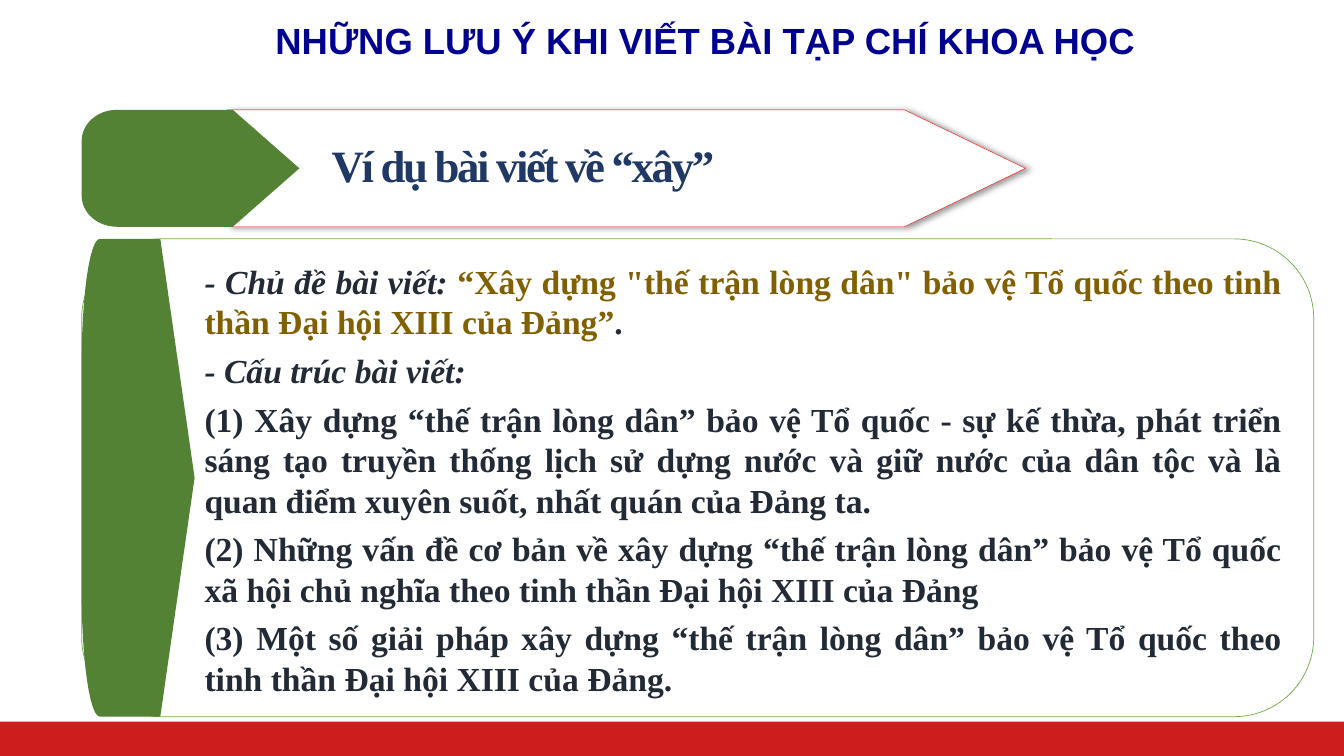
"""Build the slide with notes on writing a journal article."""
import math

from lxml import etree
from pptx import Presentation
from pptx import util as u
from pptx.dml.color import RGBColor
from pptx.enum import shapes, text
from pptx.oxml.ns import qn

COLOURS = {
    "white": "FFFFFF", "red": "CD1D1D", "outline red": "FF0000",
    "green": "548235", "light green": "70AD47", "ink": "222A35",
    "gold": "806000", "navy": "203864", "title blue": "000090",
    "black": "000000",
}
SERIF = "Times New Roman"
TITLE = "NHỮNG LƯU Ý KHI VIẾT BÀI TẠP CHÍ KHOA HỌC"
HEADING = "Ví dụ bài viết về “xây”"
BODY = [
    [("- Chủ đề bài viết: ", {"italic": True}),
     ("“Xây dựng \"thế trận lòng dân\" bảo vệ Tổ quốc theo tinh thần "
      "Đại hội XIII của Đảng”", {"colour": "gold"}),
     (".", {})],
    [("- Cấu trúc bài viết:", {"italic": True})],
    [("(1) Xây dựng “thế trận lòng dân” bảo vệ Tổ quốc - sự kế thừa, phát "
      "triển sáng tạo truyền thống lịch sử dựng nước và giữ nước của dân tộc "
      "và là quan điểm xuyên suốt, nhất quán của Đảng ta.", {})],
    [("(2) Những vấn đề cơ bản về xây dựng “thế trận lòng dân” bảo vệ Tổ quốc "
      "xã hội chủ nghĩa theo tinh thần Đại hội XIII của Đảng", {})],
    [("(3) Một số giải pháp xây dựng “thế trận lòng dân” bảo vệ Tổ quốc theo "
      "tinh thần Đại hội XIII của Đảng.", {})],
]


def rgb(name):
    """Return the named colour."""
    return RGBColor.from_string(COLOURS[name])


def paint(shape, fill, line=None, width=0.5):
    """Set the fill and outline of a shape and remove its shadow."""
    shape.shadow.inherit = False
    shape.fill.solid()
    shape.fill.fore_color.rgb = rgb(fill)
    if line:
        shape.line.color.rgb = rgb(line)
        shape.line.width = u.Pt(width)
    else:
        shape.line.fill.background()


def add_polygon(slide, points):
    """Add a closed outline through points given in inches."""
    corners = [(u.Inches(x), u.Inches(y)) for x, y in points]
    builder = slide.shapes.build_freeform(*corners[0])
    builder.add_line_segments(corners[1:], close=True)
    return builder.convert_to_shape()


def add_run(paragraph, words, size=24, font=SERIF, colour="ink",
            italic=False, spacing=None):
    """Add a bold run in the given format."""
    run = paragraph.add_run()
    run.text = words
    run.font.size = u.Pt(size)
    run.font.name = font
    run.font.bold = True
    run.font.italic = italic
    run.font.color.rgb = rgb(colour)
    if spacing is not None:
        run.font._element.set("spc", str(round(spacing * 100)))


def add_text(slide, box, paragraphs, align, anchor=text.MSO_ANCHOR.MIDDLE,
             gap=0, line_spacing=None):
    """Add a wrapped text box holding paragraphs of formatted runs."""
    frame = slide.shapes.add_textbox(*map(u.Inches, box)).text_frame
    frame.word_wrap = True
    frame.vertical_anchor = anchor
    for index, runs in enumerate(paragraphs):
        paragraph = frame.paragraphs[0] if index == 0 else frame.add_paragraph()
        paragraph.alignment = align
        paragraph.space_before = u.Pt(gap if index else 0)
        paragraph.space_after = u.Pt(gap)
        if line_spacing:
            paragraph.line_spacing = line_spacing
        for words, style in runs:
            add_run(paragraph, words, **style)


def add_tab(slide, box, shoulder, radius_x, radius_y):
    """Add a green tab with rounded left corners and a point on the right."""
    left, top, width, height = box
    angles = [math.radians(step * 7.5) for step in range(13)]
    upper = [(left + radius_x * (1 - math.cos(angle)),
              top + radius_y * (1 - math.sin(angle))) for angle in angles]
    lower = [(x, 2 * top + height - y) for x, y in reversed(upper)]
    point = [(left + shoulder, top), (left + width, top + height / 2),
             (left + shoulder, top + height)]
    paint(add_polygon(slide, upper + point + lower), "green")


def add_shadow(shape):
    """Give a shape a soft shadow to its right."""
    effects = shape._element.spPr.find(qn("a:effectLst"))
    shadow = etree.SubElement(effects, qn("a:outerShdw"), blurRad=str(u.Pt(4)),
                              dist=str(u.Pt(3)), dir="0", algn="l",
                              rotWithShape="0")
    colour = etree.SubElement(shadow, qn("a:srgbClr"), val=COLOURS["black"])
    etree.SubElement(colour, qn("a:alpha"), val="40000")


def add_footer(slide, box):
    """Add the red band at the foot."""
    band = slide.shapes.add_shape(shapes.MSO_SHAPE.RECTANGLE,
                                  *map(u.Inches, box))
    paint(band, "red")


def add_title(slide, box):
    """Add the slide title."""
    style = {"size": 26, "font": "Arial", "colour": "title blue"}
    add_text(slide, box, [[(TITLE, style)]], text.PP_ALIGN.CENTER,
             line_spacing=0.9)


def add_banner(slide, box):
    """Add the arrow banner with its green tab and heading."""
    left, top, width, height = box
    start, right, bottom = left + 1.44, left + width, top + height
    arrow = add_polygon(slide, [
        (start, top), (right - 1.2, top), (right, top + height / 2),
        (right - 1.2, bottom), (start, bottom)])
    paint(arrow, "white", "outline red", 0.25)
    add_shadow(arrow)
    add_tab(slide, (left, top, 2.16, height), 1.5, 0.35, 0.31)
    style = {"size": 32, "colour": "navy", "spacing": -1.7}
    add_text(slide, (left + 2.38, top + 0.22, 5.78, 0.64),
             [[(HEADING, style)]], text.PP_ALIGN.JUSTIFY)


def add_panel(slide, box):
    """Add the rounded panel with its green tab and body text."""
    left, top, width, height = box
    panel = slide.shapes.add_shape(shapes.MSO_SHAPE.ROUNDED_RECTANGLE,
                                   *map(u.Inches, box))
    paint(panel, "white", "light green")
    add_tab(slide, (left, top, 1.12, height), 0.78, 0.18, 1.25)
    add_text(slide, (left + 1.12, top + 0.17, 10.88, 4.44), BODY,
             text.PP_ALIGN.JUSTIFY, text.MSO_ANCHOR.TOP, gap=3)


def main():
    """Build and save the presentation."""
    presentation = Presentation()
    presentation.slide_width = u.Inches(13.33)
    presentation.slide_height = u.Inches(7.5)
    slide = presentation.slides.add_slide(presentation.slide_layouts[6])
    add_footer(slide, (0, 7.16, 13.33, 0.34))
    add_panel(slide, (0.81, 2.37, 12.22, 4.74))
    add_banner(slide, (0.81, 1.09, 9.36, 1.16))
    add_title(slide, (1.59, 0, 10.82, 0.84))
    presentation.save("out.pptx")


if __name__ == "__main__":
    main()
